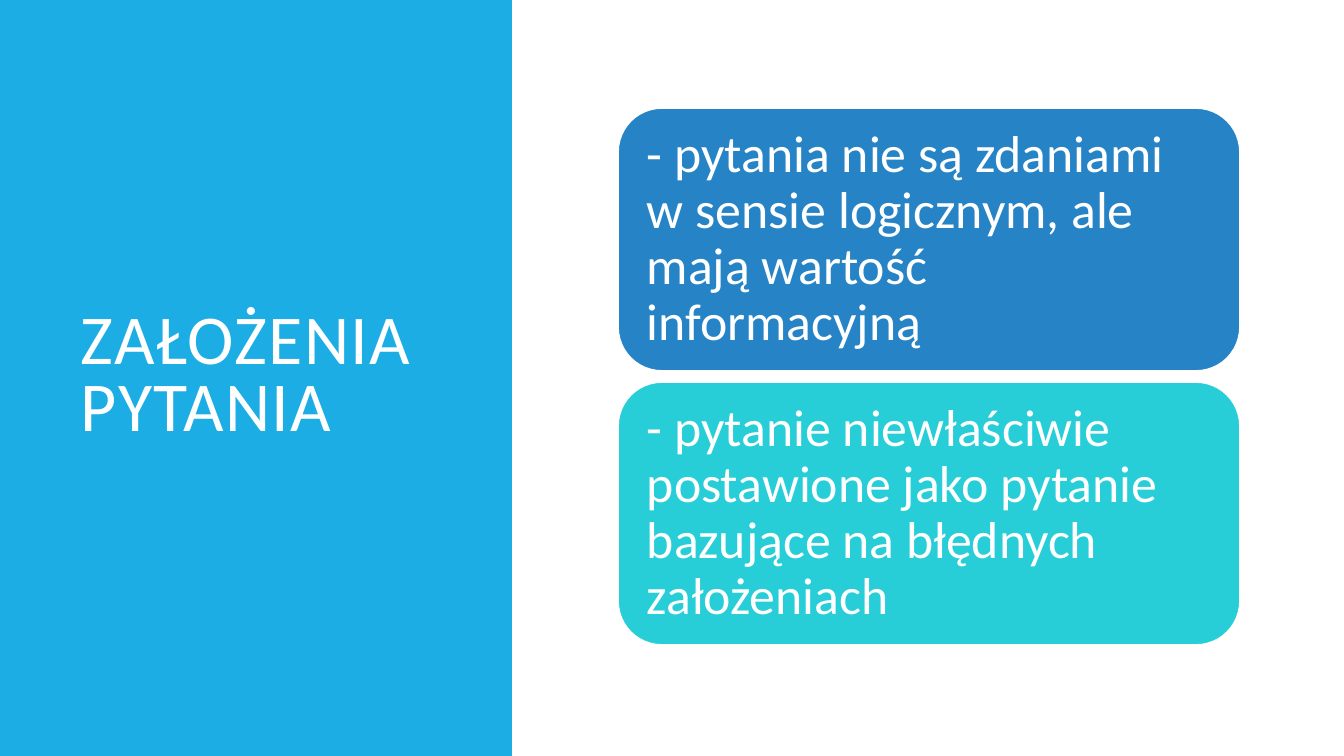
from pptx import Presentation
from pptx.dml.color import RGBColor
from pptx.enum.shapes import MSO_SHAPE as Shape
from pptx.enum.text import MSO_ANCHOR as Anchor, PP_ALIGN as Align
from pptx.util import Emu, Pt

WHITE = "FFFFFF"
CARDS = [
    ("2683C6", "- pytania nie są zdaniami w sensie logicznym, ale mają wartość informacyjną"),
    ("27CED7", "- pytanie niewłaściwie postawione jako pytanie bazujące na błędnych założeniach"),
]
CARD_TOP, CARD_HEIGHT, CARD_GAP = 108, 263, 11


def px(length):
    return Emu(round(length * 914400 / 100.8))


def color(hex_code):
    return RGBColor.from_string(hex_code)


def add_block(slide, kind, box, fill):
    """Add a filled shape without outline or shadow."""
    block = slide.shapes.add_shape(kind, *map(px, box))
    block.shadow.inherit = False
    block.fill.solid()
    block.fill.fore_color.rgb = color(fill)
    block.line.fill.background()
    return block


def write(shape, text, size, line_spacing, left, right):
    """Set white, left-aligned, vertically centred text and return its run."""
    frame = shape.text_frame
    frame.word_wrap = True
    frame.vertical_anchor = Anchor.MIDDLE
    frame.margin_left, frame.margin_right = px(left), px(right)
    frame.margin_top = frame.margin_bottom = px(10)
    paragraph = frame.paragraphs[0]
    paragraph.text = text
    paragraph.alignment = Align.LEFT
    paragraph.line_spacing = line_spacing
    run = paragraph.runs[0]
    run.font.name = "Calibri"
    run.font.size = Pt(size)
    run.font.color.rgb = color(WHITE)
    return run


def add_title(slide, text):
    title = slide.shapes.add_textbox(*map(px, (71, 71, 377, 614)))
    run = write(title, text, 50, 0.8, left=10, right=10)
    run.font._element.set("spc", "100")


def add_card(slide, top, fill, text):
    card = add_block(slide, Shape.ROUNDED_RECTANGLE, (618, top, 622, CARD_HEIGHT), fill)
    card.line.color.rgb = color(WHITE)
    card.line.width = Pt(1.25)
    write(card, text, 37, 0.9, left=16, right=20)


def main():
    deck = Presentation()
    deck.slide_width, deck.slide_height = px(1344), px(756)
    slide = deck.slides.add_slide(deck.slide_layouts[6])
    add_block(slide, Shape.RECTANGLE, (0, 0, 512, 756), "1CADE4")
    add_title(slide, "ZAŁOŻENIA PYTANIA")
    for row, (fill, text) in enumerate(CARDS):
        add_card(slide, CARD_TOP + row * (CARD_HEIGHT + CARD_GAP), fill, text)
    deck.save("out.pptx")


if __name__ == "__main__":
    main()
